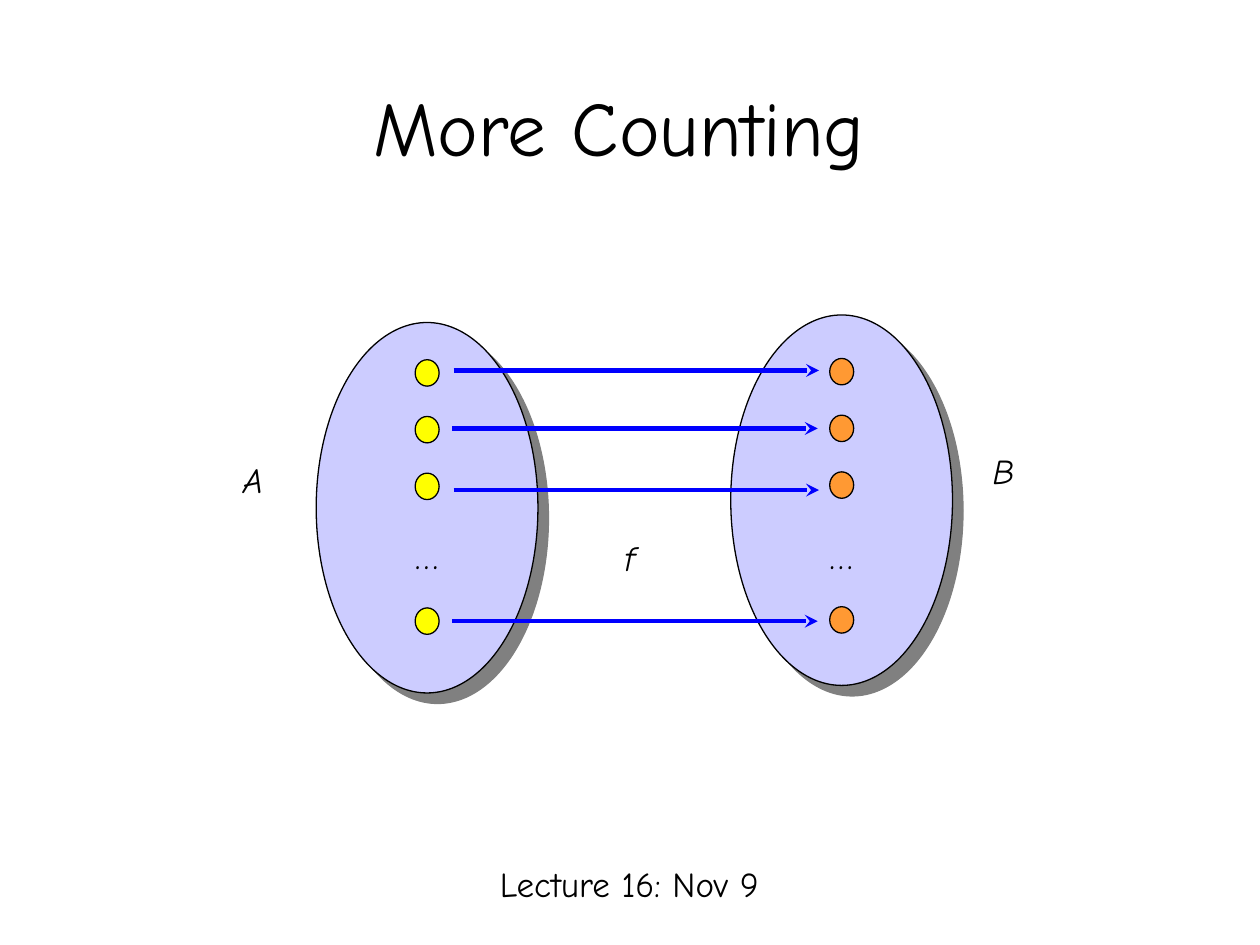
import pptx
import pptx.dml.color
import pptx.enum.shapes
import pptx.enum.text
import pptx.oxml
import pptx.oxml.ns
import pptx.util
import lxml.etree

RGB = pptx.dml.color.RGBColor
BLACK = RGB(0x00, 0x00, 0x00)
LAVENDER = RGB(0xCC, 0xCC, 0xFF)
YELLOW = RGB(0xFF, 0xFF, 0x00)
ORANGE = RGB(0xFF, 0x99, 0x33)
BLUE = RGB(0x00, 0x00, 0xFF)
SHADOW_GRAY = RGB(0x80, 0x80, 0x80)
FONT = "Comic Neue"
Inches, Pt = pptx.util.Inches, pptx.util.Pt
ALIGN, ANCHOR = pptx.enum.text.PP_ALIGN, pptx.enum.text.MSO_ANCHOR

deck = pptx.Presentation()
deck.slide_width, deck.slide_height = Inches(10), Inches(7.5)
slide = deck.slides.add_slide(deck.slide_layouts[6])


def add_text(text, left, top, width, height, size=20, italic=False,
             align=ALIGN.LEFT, anchor=ANCHOR.TOP, wrap=False, spacing=1.0):
    box = slide.shapes.add_textbox(*map(Inches, (left, top, width, height)))
    frame = box.text_frame
    frame.word_wrap, frame.vertical_anchor = wrap, anchor
    if not wrap:
        frame.auto_size = pptx.enum.text.MSO_AUTO_SIZE.SHAPE_TO_FIT_TEXT
    paragraph = frame.paragraphs[0]
    paragraph.alignment, paragraph.line_spacing = align, spacing
    run = paragraph.add_run()
    run.text = text
    run.font.name, run.font.size, run.font.italic = FONT, Pt(size), italic
    run.font.color.rgb = BLACK


def add_oval(center_x, center_y, width, height, fill):
    oval = slide.shapes.add_shape(
        pptx.enum.shapes.MSO_SHAPE.OVAL,
        Inches(center_x - width / 2), Inches(center_y - height / 2),
        Inches(width), Inches(height))
    oval.fill.solid()
    oval.fill.fore_color.rgb = fill
    oval.line.color.rgb, oval.line.width = BLACK, Pt(0.75)
    oval.shadow.inherit = False
    return oval


# Title and lecture date
add_text("More Counting", 0.25, 0.5, 9.33, 1, size=44, align=ALIGN.CENTER,
         anchor=ANCHOR.MIDDLE, wrap=True)
add_text("Lecture 16: Nov 9", 3.33, 6.83, 3.33, 0.42, align=ALIGN.CENTER,
         wrap=True, spacing=0.9)

# The two sets, each with a shadow, its elements and an ellipsis
domain_x, codomain_x = 3.39, 6.68
element_rows = (2.96, 3.41, 3.86, 4.93)
for set_x, set_y, element_color, rise in (
        (domain_x, 4.03, YELLOW, 0), (codomain_x, 3.97, ORANGE, 0.01)):
    set_oval = add_oval(set_x, set_y, 1.76, 2.94, LAVENDER)
    effects = set_oval._element.spPr.find(pptx.oxml.ns.qn("a:effectLst"))
    shadow = lxml.etree.SubElement(
        effects, pptx.oxml.ns.qn("a:outerShdw"), dist=str(Pt(8.5)),
        dir=str(45 * 60000), algn="ctr", rotWithShape="0")
    lxml.etree.SubElement(shadow, pptx.oxml.ns.qn("a:srgbClr"),
                          val=str(SHADOW_GRAY))
    for row_y in element_rows:
        add_oval(set_x, row_y - rise, 0.19, 0.21, element_color)
    add_text("…", set_x - 0.2, 4.19, 0.39, 0.43, align=ALIGN.CENTER)

# Names of the sets and of the function
for name, left, top, width in (
        ("A", 1.83, 3.59, 0.4), ("B", 7.78, 3.52, 0.38), ("f", 4.86, 4.21, 0.34)):
    add_text(name, left, top, width, 0.43, italic=True)

# Mapping arrows from A to B
for start_x, arrow_y in ((3.6, 2.94), (3.59, 3.4), (3.6, 3.89), (3.59, 4.93)):
    arrow = slide.shapes.add_connector(
        pptx.enum.shapes.MSO_CONNECTOR.STRAIGHT, Inches(start_x),
        Inches(arrow_y), Inches(start_x + 2.9), Inches(arrow_y))
    arrow.line.color.rgb, arrow.line.width = BLUE, Pt(2.5)
    lxml.etree.SubElement(arrow.line._get_or_add_ln(),
                          pptx.oxml.ns.qn("a:tailEnd"), type="stealth")
    lxml.etree.SubElement(arrow._element.spPr,
                          pptx.oxml.ns.qn("a:effectLst"))

deck.save("out.pptx")
